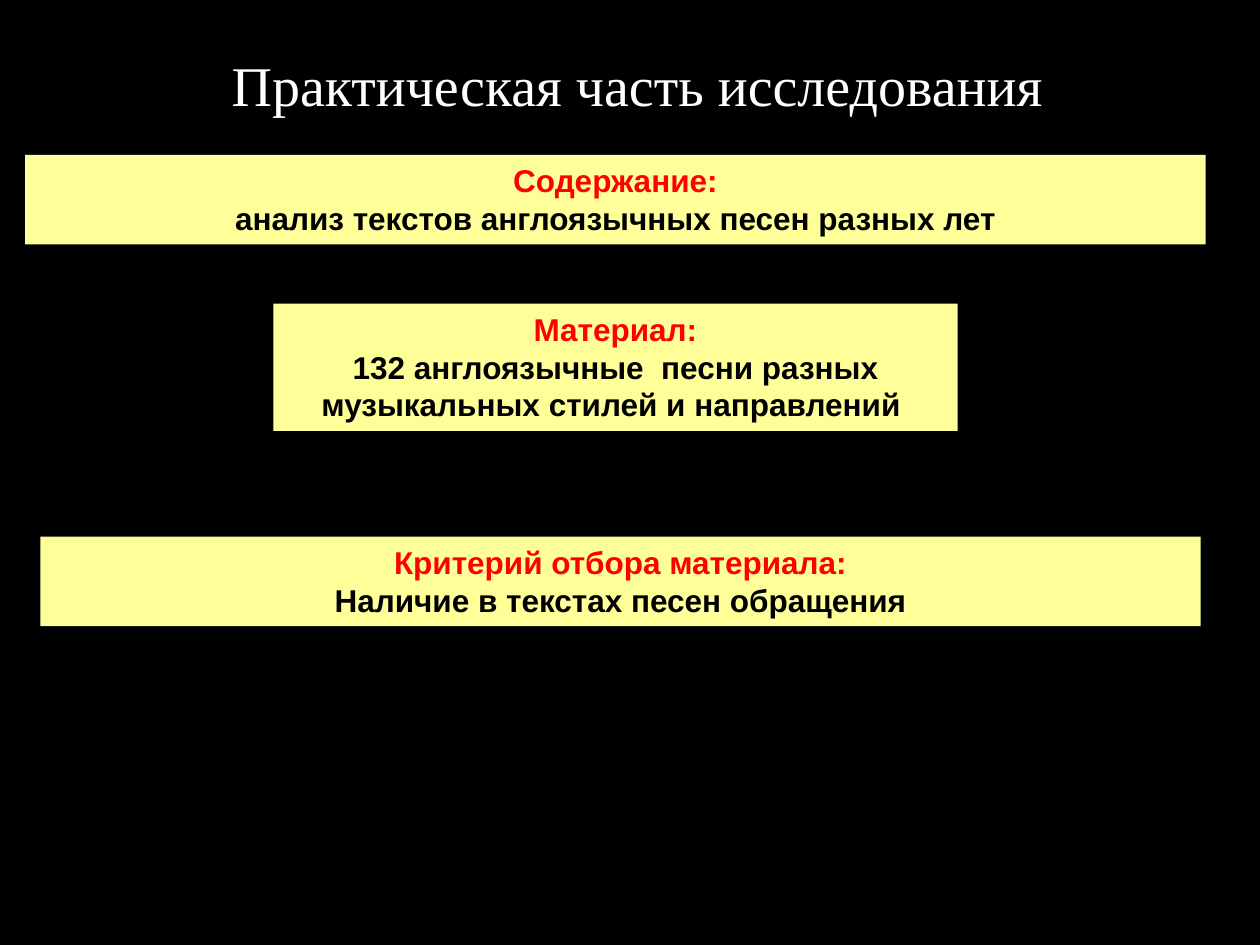
from dataclasses import dataclass

from pptx import Presentation
from pptx import util as u
from pptx.dml.color import RGBColor
from pptx.enum import shapes, text


@dataclass(frozen=True)
class Theme:
    background: RGBColor = RGBColor(0, 0, 0)
    panel: RGBColor = RGBColor(0xFF, 0xFF, 0x99)
    title: RGBColor = RGBColor(0xFF, 0xFF, 0xFF)
    heading: RGBColor = RGBColor(0xFF, 0, 0)
    body: RGBColor = RGBColor(0, 0, 0)
    title_font: str = "Times New Roman"
    body_font: str = "Arial"
    title_size: int = 32
    body_size: int = 18


THEME = Theme()
WIDTH, HEIGHT = 10, 7.5

TITLE_BOX = (0.55, 0.35, 9.02, 0.64)
PANELS = [
    ((0.2, 1.23, 9.37, 0.71), "Содержание:",
     "анализ текстов англоязычных песен разных лет"),
    ((2.17, 2.41, 5.43, 1.01), "Материал:",
     "132 англоязычные  песни разных музыкальных стилей и направлений "),
    ((0.32, 4.26, 9.21, 0.71), "Критерий отбора материала:",
     "Наличие в текстах песен обращения"),
]


def place(shape, box):
    shape.left, shape.top, shape.width, shape.height = map(u.Inches, box)


def format_paragraph(para, font_name, size, color, bold=False):
    para.alignment = text.PP_ALIGN.CENTER
    for span in para.runs:
        span.font.name = font_name
        span.font.size = u.Pt(size)
        span.font.bold = bold
        span.font.color.rgb = color


def add_title(page, box, wording):
    title = page.shapes.title
    place(title, box)
    frame = title.text_frame
    frame.text = wording
    frame.word_wrap = True
    frame.auto_size = text.MSO_AUTO_SIZE.SHAPE_TO_FIT_TEXT
    frame.vertical_anchor = text.MSO_ANCHOR.TOP
    format_paragraph(frame.paragraphs[0], THEME.title_font, THEME.title_size, THEME.title)


def add_panel(page, box, heading, body):
    panel = page.shapes.add_shape(shapes.MSO_SHAPE.RECTANGLE, *map(u.Inches, box))
    panel.shadow.inherit = False
    panel.fill.solid()
    panel.fill.fore_color.rgb = THEME.panel
    panel.line.fill.background()
    frame = panel.text_frame
    frame.text = f"{heading}\n{body}"
    frame.word_wrap = True
    frame.auto_size = text.MSO_AUTO_SIZE.SHAPE_TO_FIT_TEXT
    frame.vertical_anchor = text.MSO_ANCHOR.TOP
    for para, color in zip(frame.paragraphs, (THEME.heading, THEME.body)):
        format_paragraph(para, THEME.body_font, THEME.body_size, color, bold=True)


def main():
    deck = Presentation()
    deck.slide_width, deck.slide_height = u.Inches(WIDTH), u.Inches(HEIGHT)
    page = deck.slides.add_slide(deck.slide_layouts.get_by_name("Title Only"))
    page.background.fill.solid()
    page.background.fill.fore_color.rgb = THEME.background
    add_title(page, TITLE_BOX, "Практическая часть исследования")
    for box, heading, body in PANELS:
        add_panel(page, box, heading, body)
    deck.save("out.pptx")


if __name__ == "__main__":
    main()
